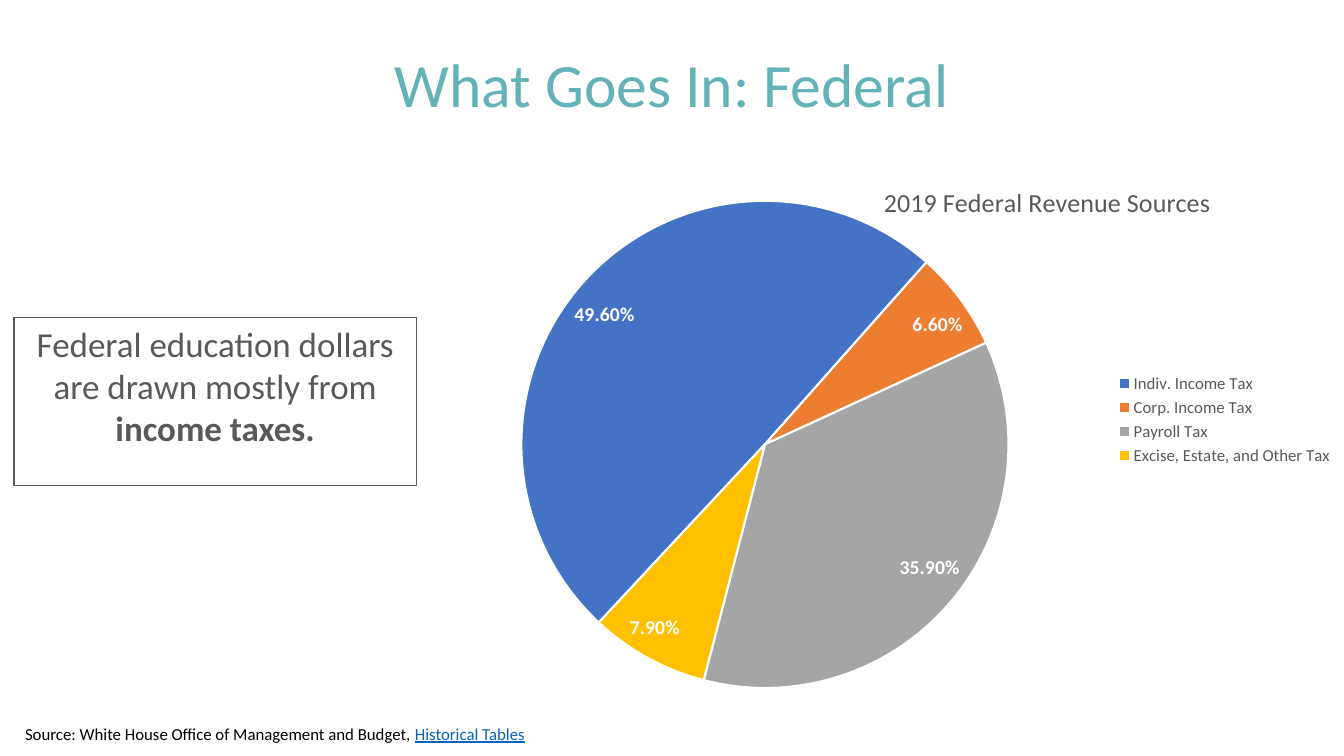
from lxml.etree import SubElement
from pptx import Presentation
from pptx.chart.data import CategoryChartData
from pptx.dml.color import RGBColor
from pptx.enum.chart import XL_CHART_TYPE, XL_LABEL_POSITION, XL_LEGEND_POSITION
from pptx.enum.shapes import MSO_SHAPE
from pptx.enum.text import MSO_ANCHOR, PP_ALIGN
from pptx.oxml import parse_xml
from pptx.oxml.ns import nsdecls, qn
from pptx.util import Pt

# Content
TITLE = "What Goes In: Federal"
CHART_TITLE = "2019 Federal Revenue Sources"
REVENUE = [
    ("Indiv. Income Tax", 0.496, "4472C4"),
    ("Corp. Income Tax", 0.066, "ED7D31"),
    ("Payroll Tax", 0.359, "A5A5A5"),
    ("Excise, Estate, and Other Tax", 0.079, "FFC000"),
]
MESSAGE = [("Federal education dollars are drawn mostly from ", {}),
           ("income taxes.", {"bold": True})]
SOURCE = [("Source: White House Office of Management and Budget, ", {}),
          ("Historical Tables", {"color": "0563C1", "underline": True})]

FONT = "Calibri"
GRAY, TEAL, WHITE, BLACK = "595959", "63B2B8", "FFFFFF", "000000"

# Places in points: left, top, width, height
SLIDE_SIZE = (960, 540)
TITLE_BOX = (0, 16, 960, 93.6)
CHART_BOX = (320, 86.4, 640, 427)
MESSAGE_BOX = (10, 226.8, 287.3, 120.3)
SOURCE_BOX = (10.8, 513.4, 387.4, 21.6)
PIE_CENTER, PIE_RADIUS = (546.4, 317.5), 174
CHART_TITLE_AT = (628, 128)


def rgb(color):
    return RGBColor.from_string(color)


def place(box):
    return [Pt(value) for value in box]


def format_font(font, size, color, bold=False, underline=None):
    font.name, font.size, font.bold = FONT, Pt(size), bold
    font.color.rgb = rgb(color)
    if underline:
        font.underline = True


def write(paragraph, text, size=12, color=BLACK, bold=False, underline=None):
    run = paragraph.add_run()
    run.text = text
    format_font(run.font, size, color, bold, underline)


def set_layout(parent, index, **fractions):
    """Give a chart part a manual layout in fractions of the chart."""
    for old in parent.findall(qn("c:layout")):
        parent.remove(old)
    layout = parse_xml(f"<c:layout {nsdecls('c')}><c:manualLayout/></c:layout>")
    manual = layout[0]
    if "w" in fractions:
        SubElement(manual, qn("c:layoutTarget")).set("val", "inner")
    for axis in "xy":
        SubElement(manual, qn(f"c:{axis}Mode")).set("val", "edge")
    for name, value in fractions.items():
        SubElement(manual, qn(f"c:{name}")).set("val", f"{value:.4f}")
    parent.insert(index, layout)


presentation = Presentation()
presentation.slide_width, presentation.slide_height = place(SLIDE_SIZE)
slide = presentation.slides.add_slide(presentation.slide_layouts[5])

# Title
title = slide.shapes.title
title.left, title.top, title.width, title.height = place(TITLE_BOX)
title.text_frame.vertical_anchor = MSO_ANCHOR.MIDDLE
paragraph = title.text_frame.paragraphs[0]
paragraph.alignment, paragraph.line_spacing = PP_ALIGN.CENTER, 0.9
write(paragraph, TITLE, size=44, color=TEAL)

# Pie chart
data = CategoryChartData(number_format="0.00%")
data.categories = [name for name, _, _ in REVENUE]
data.add_series(CHART_TITLE, [value for _, value, _ in REVENUE])
chart = slide.shapes.add_chart(XL_CHART_TYPE.PIE, *place(CHART_BOX), data).chart
format_font(chart.font, 10, BLACK)
chart.has_title = True
write(chart.chart_title.text_frame.paragraphs[0], CHART_TITLE, size=18.6, color=GRAY)
chart.chart_title.include_in_layout = False
chart.has_legend = True
chart.legend.position = XL_LEGEND_POSITION.RIGHT
chart.legend.include_in_layout = False
format_font(chart.legend.font, 12, GRAY)

# Slices and their labels
plot = chart.plots[0]
plot.vary_by_categories = True
for index, (_, _, color) in enumerate(REVENUE):
    slice_format = plot.series[0].points[index].format
    slice_format.fill.solid()
    slice_format.fill.fore_color.rgb = rgb(color)
    slice_format.line.color.rgb = rgb(WHITE)
    slice_format.line.width = Pt(1.5)
plot.has_data_labels = True
labels = plot.data_labels
labels.show_value, labels.show_percentage = True, False
labels.number_format, labels.number_format_is_linked = "0.00%", False
labels.position = XL_LABEL_POSITION.BEST_FIT
format_font(labels.font, 14, WHITE, bold=True)

# Chart arrangement: rotation, pie and title positions
pie = chart.element.find(".//" + qn("c:pieChart"))
angle = pie.find(qn("c:firstSliceAng"))
if angle is None:
    angle = SubElement(pie, qn("c:firstSliceAng"))
angle.set("val", "223")
left, top, width, height = CHART_BOX
set_layout(pie.getparent(), 0,
           x=(PIE_CENTER[0] - PIE_RADIUS - left) / width,
           y=(PIE_CENTER[1] - PIE_RADIUS - top) / height,
           w=2 * PIE_RADIUS / width, h=2 * PIE_RADIUS / height)
set_layout(chart.element.find(".//" + qn("c:title")), 1,
           x=(CHART_TITLE_AT[0] - left) / width,
           y=(CHART_TITLE_AT[1] - top) / height)

# Source line
source = slide.shapes.add_textbox(*place(SOURCE_BOX)).text_frame
source.word_wrap = True
for text, style in SOURCE:
    write(source.paragraphs[0], text, **style)

# Message box
shape = slide.shapes.add_shape(MSO_SHAPE.RECTANGLE, *place(MESSAGE_BOX))
shape.shadow.inherit = False
shape.fill.background()
shape.line.color.rgb = rgb(GRAY)
shape.line.width = Pt(0.75)
message = shape.text_frame
message.word_wrap = True
message.vertical_anchor = MSO_ANCHOR.TOP
message.paragraphs[0].alignment = PP_ALIGN.CENTER
for text, style in MESSAGE:
    write(message.paragraphs[0], text, size=25, color=GRAY, **style)

presentation.save("out.pptx")
